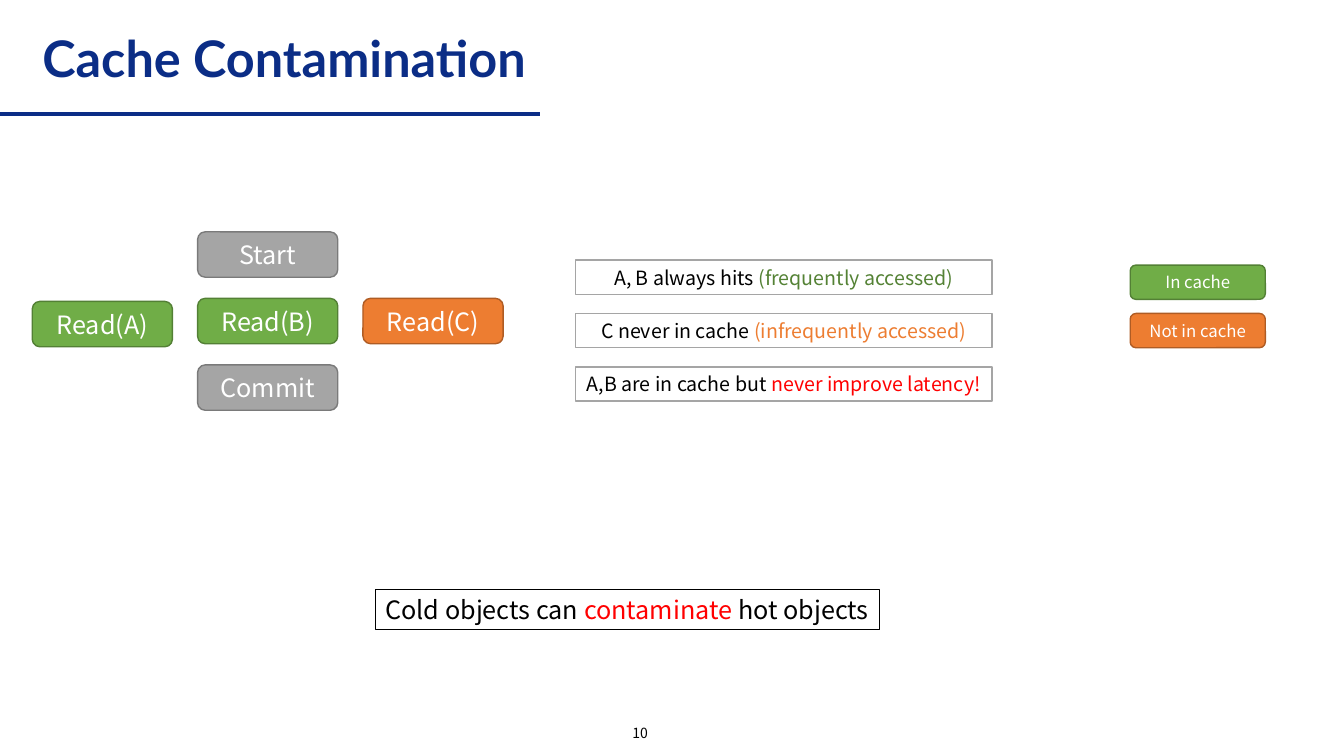
import dataclasses

import pptx
import pptx.dml.color
import pptx.enum.shapes
import pptx.enum.text
import pptx.oxml
import pptx.util

Inches = pptx.util.Inches
Pt = pptx.util.Pt
Kind = pptx.enum.shapes.MSO_SHAPE
Align = pptx.enum.text.PP_ALIGN

COLOR = {
    "navy": "0B2D86", "black": "000000", "white": "FFFFFF", "red": "FF0000",
    "gray": "A5A5A5", "slate": "7A7A7A", "green": "70AD47", "moss": "538035",
    "leaf": "548235", "orange": "ED7D31", "rust": "AF5C24",
}
EDGE = {"gray": "slate", "green": "moss", "orange": "rust"}
BODY = "Noto Sans CJK KR"
FRAME = {"word_wrap": False, "vertical_anchor": pptx.enum.text.MSO_ANCHOR.MIDDLE}

Run = tuple[str, str]


@dataclasses.dataclass
class Box:
    left: float
    top: float
    width: float
    height: float
    runs: list[Run]
    size: int
    fill: str = ""
    edge: str = ""
    weight: float = 1
    kind: Kind = Kind.RECTANGLE


def shade(name: str) -> pptx.dml.color.RGBColor:
    return pptx.dml.color.RGBColor.from_string(COLOR[name])


def apply(target: object, style: dict) -> None:
    for key, value in style.items():
        setattr(target, key, value)


def write(frame, runs: list[Run], align: Align, style: dict) -> None:
    apply(frame, FRAME)
    line = frame.paragraphs[0]
    line.alignment = align
    for text, color in runs:
        run = line.add_run()
        run.text = text
        apply(run.font, style)
        run.font.color.rgb = shade(color)


def place(shape, left: float, top: float, width: float, height: float) -> None:
    apply(shape, {"left": Inches(left), "top": Inches(top),
                  "width": Inches(width), "height": Inches(height)})


def draw(slide, box: Box) -> None:
    shape = slide.shapes.add_shape(box.kind, 0, 0, 0, 0)
    place(shape, box.left, box.top, box.width, box.height)
    shape.shadow.inherit = False
    if box.fill:
        shape.fill.solid()
        shape.fill.fore_color.rgb = shade(box.fill)
    else:
        shape.fill.background()
    shape.line.color.rgb = shade(box.edge)
    shape.line.width = Pt(box.weight)
    write(shape.text_frame, box.runs, Align.CENTER, {"size": Pt(box.size), "name": BODY})


def step(left: float, top: float, text: str, fill: str) -> Box:
    return Box(left, top, 1.39, 0.45, [(text, "white")], 18, fill, EDGE[fill],
               kind=Kind.ROUNDED_RECTANGLE)


def key(row: int, text: str, fill: str) -> Box:
    return Box(11.21, 2.63 + 0.48 * row, 1.34, 0.34, [(text, "white")], 12, fill,
               EDGE[fill], kind=Kind.ROUNDED_RECTANGLE)


def note(row: int, fact: str, stress: str, color: str) -> Box:
    return Box(5.71, 2.58 + 0.53 * row, 4.13, 0.34,
               [(fact, "black"), (stress, color)], 14, "white", "gray")


def head(slide) -> None:
    rule = slide.shapes.add_connector(
        pptx.enum.shapes.MSO_CONNECTOR.STRAIGHT,
        Inches(0), Inches(1.13), Inches(5.36), Inches(1.13))
    rule.line.color.rgb = shade("navy")
    rule.line.width = Pt(3)
    rule._element.spPr.append(pptx.oxml.parse_xml(
        '<a:effectLst xmlns:a="http://schemas.openxmlformats.org/drawingml/2006/main"/>'))
    title = slide.shapes.title
    place(title, 0.32, 0.24, 9.17, 0.74)
    write(title.text_frame, [("Cache Contamination", "navy")], Align.LEFT,
          {"size": Pt(36), "name": "Lato", "bold": True})
    title.text_frame.paragraphs[0].line_spacing = 0.9


def main() -> None:
    deck = pptx.Presentation()
    apply(deck, {"slide_width": Inches(13.33), "slide_height": Inches(7.5)})
    slide = deck.slides.add_slide(deck.slide_layouts[5])
    head(slide)
    page = slide.shapes.add_textbox(Inches(4.85), Inches(7.11), Inches(3), Inches(0.32))
    write(page.text_frame, [("10", "black")], Align.CENTER, {"size": Pt(10), "name": BODY})
    steps = [
        step(1.96, 2.3, "Start", "gray"),
        step(1.96, 2.96, "Read(B)", "green"),
        step(3.6, 2.96, "Read(C)", "orange"),
        step(0.32, 2.99, "Read(A)", "green"),
        step(1.96, 3.62, "Commit", "gray"),
    ]
    keys = [key(0, "In cache", "green"), key(1, "Not in cache", "orange")]
    notes = [
        note(0, "A, B always hits ", "(frequently accessed)", "leaf"),
        note(1, "C never in cache ", "(infrequently accessed)", "orange"),
        note(2, "A,B are in cache but ", "never improve latency!", "red"),
    ]
    moral = Box(3.72, 5.85, 5, 0.4,
                [("Cold objects can ", "black"), ("contaminate ", "red"),
                 ("hot objects", "black")], 18, edge="black", weight=0.75)
    for box in [*steps, *keys, *notes, moral]:
        draw(slide, box)
    deck.save("out.pptx")


if __name__ == "__main__":
    main()
